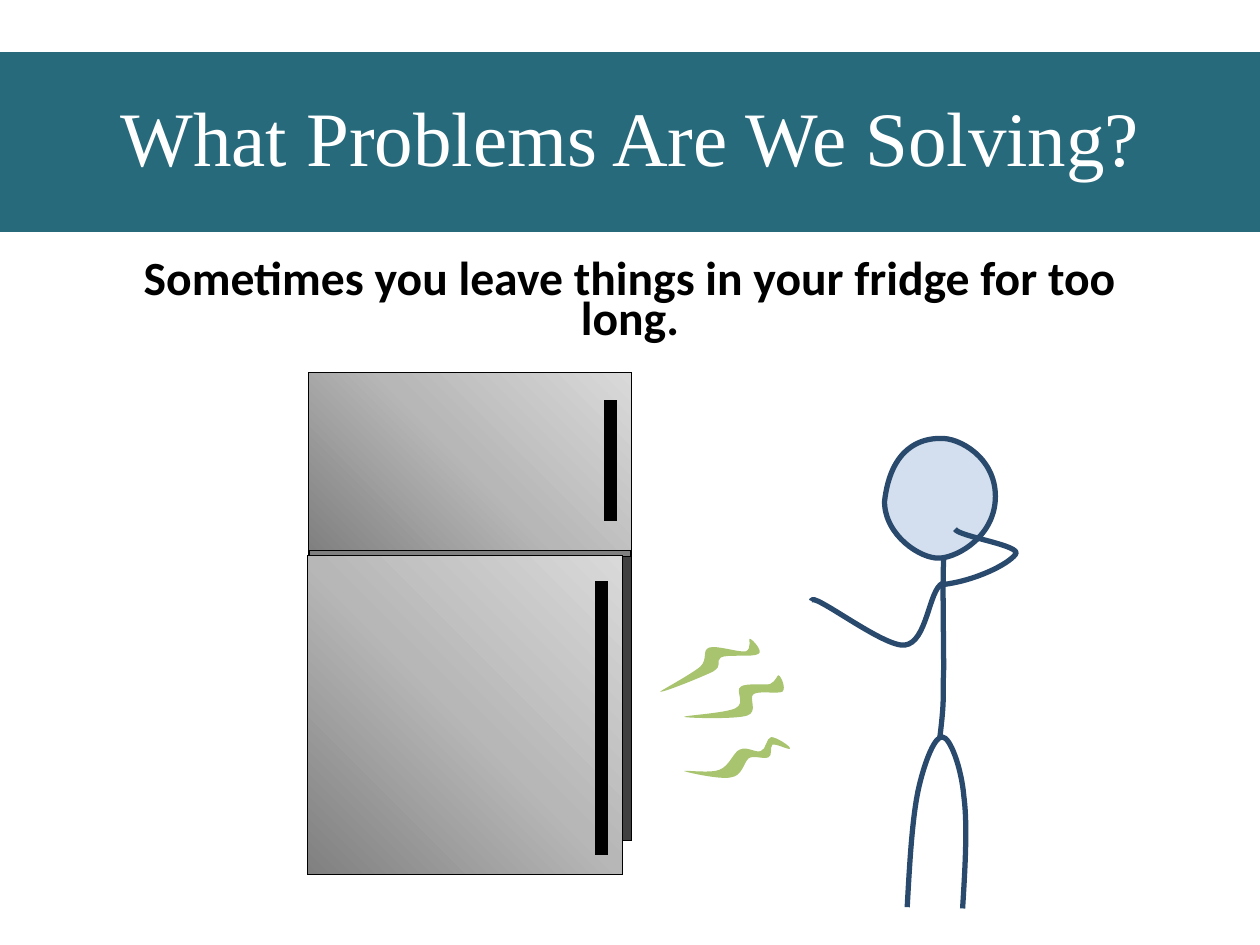
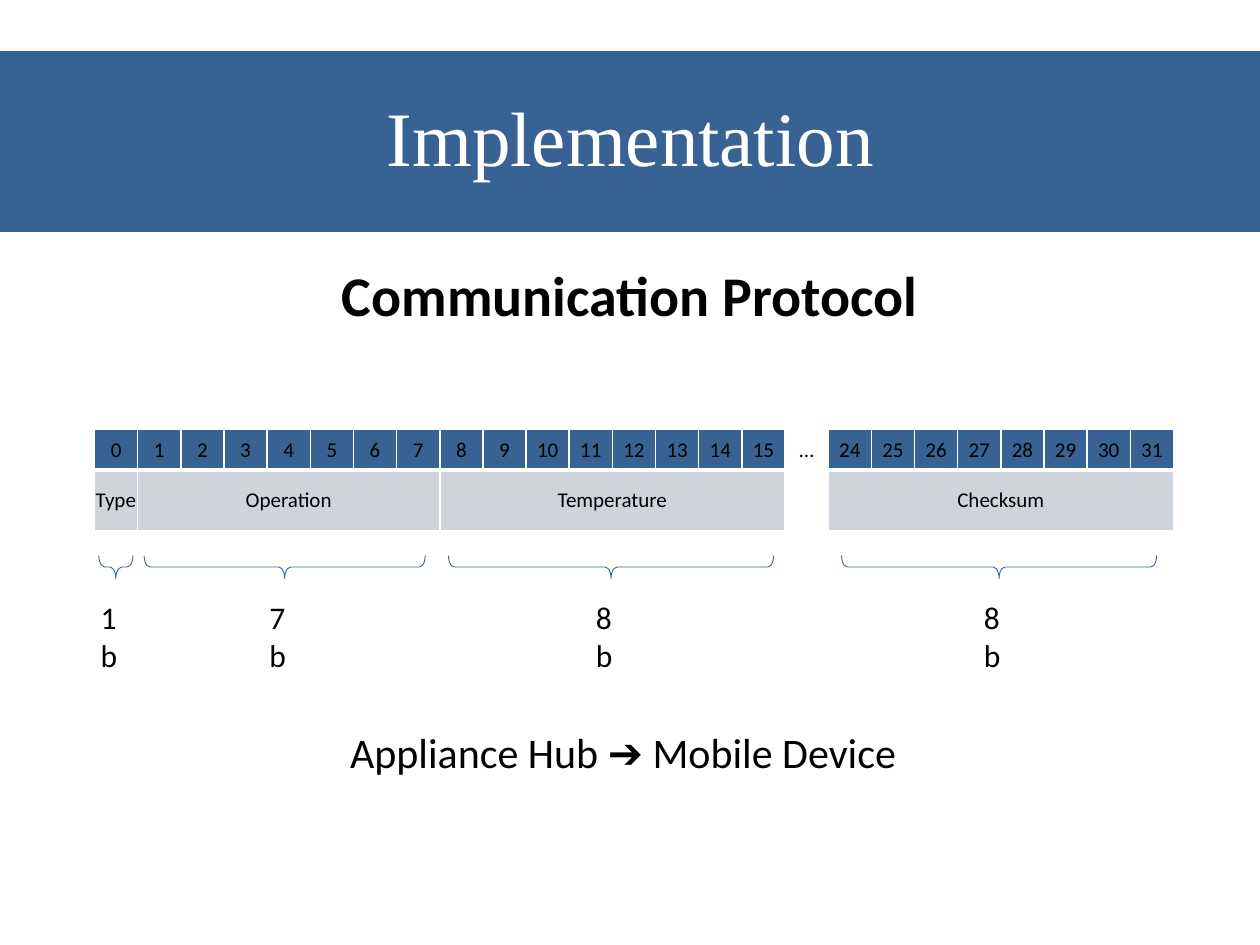
from copy import deepcopy

from lxml.etree import SubElement
from pptx import Presentation
from pptx.dml.color import RGBColor
from pptx.enum.shapes import MSO_SHAPE as Preset
from pptx.enum.text import MSO_ANCHOR as Anchor, PP_ALIGN as Align
from pptx.oxml.ns import qn
from pptx.util import Inches, Pt

COLORS = {
    "teal": "276A7C", "blue": "386294", "navy": "29496D", "skin": "D3DFEE",
    "smell": "A8C46F", "cell": "CED3DC", "white": "FFFFFF", "black": "000000",
    "gray": "808080", "charcoal": "404040",
}
STEEL = [(0, "808080"), (0.5, "B7B7B7"), (1, "D9D9D9")]
BODY_FONT, TITLE_FONT = "Calibri", "Times New Roman"

# Slide 1 content: fridge parts as (box, fill, line width)
FRIDGE = [
    ((2.45, 4.23, 2.56, 0.36), "gray", 1),
    ((2.45, 4.42, 2.56, 2.25), "charcoal", 0.5),
    ((2.45, 2.96, 2.56, 1.41), "steel", 0.5),
    ((4.8, 3.18, 0.09, 0.95), "black", 1),
    ((2.44, 4.41, 2.5, 2.53), "steel", 0.5),
    ((4.73, 4.62, 0.09, 2.16), "black", 1),
]

# Curves: a start point, then two control points and an end point per piece
HEAD = [(7.9, 3.94), (7.9, 3.63), (7.61, 3.47), (7.46, 3.48), (7.31, 3.48),
        (7.07, 3.55), (7.02, 3.98), (7.02, 4.25), (7.31, 4.44), (7.46, 4.43),
        (7.61, 4.42), (7.9, 4.25), (7.9, 3.94)]
LIMBS = [
    # spine
    [(7.49, 4.44), (7.48, 4.63), (7.49, 5.07), (7.49, 5.31),
     (7.48, 5.55), (7.5, 5.52), (7.46, 5.85)],
    # arm holding the nose
    [(7.48, 4.64), (7.74, 4.61), (8, 4.48), (8.06, 4.4),
     (8.12, 4.33), (7.61, 4.26), (7.58, 4.2)],
    # arm reaching out
    [(7.48, 4.63), (7.37, 4.68), (7.36, 5.1), (7.18, 5.12),
     (7.01, 5.14), (6.43, 4.68), (6.44, 4.77)],
    # legs
    [(7.2, 7.2), (7.22, 6.84), (7.24, 6.49), (7.29, 6.26),
     (7.34, 6.04), (7.42, 5.84), (7.48, 5.85), (7.54, 5.85), (7.63, 6.09),
     (7.65, 6.32), (7.68, 6.55), (7.66, 6.88), (7.64, 7.21)],
]
SMELLS = [
    [(5.43, 5.69), (5.42, 5.68), (5.77, 5.66), (5.84, 5.62),
     (5.92, 5.58), (5.83, 5.48), (5.88, 5.45), (5.92, 5.42), (6.06, 5.44),
     (6.11, 5.43), (6.16, 5.41), (6.17, 5.35), (6.18, 5.36), (6.2, 5.37),
     (6.24, 5.46), (6.21, 5.49), (6.17, 5.51), (6.02, 5.48), (5.98, 5.51),
     (5.94, 5.54), (6.02, 5.65), (5.93, 5.68), (5.84, 5.71), (5.45, 5.7),
     (5.43, 5.69)],
    [(5.24, 5.49), (5.23, 5.49), (5.49, 5.35), (5.56, 5.29),
     (5.62, 5.23), (5.57, 5.16), (5.63, 5.14), (5.69, 5.12), (5.86, 5.18),
     (5.92, 5.17), (5.97, 5.15), (5.94, 5.06), (5.95, 5.07), (5.97, 5.07),
     (6.06, 5.17), (6.02, 5.19), (5.98, 5.22), (5.76, 5.19), (5.72, 5.22),
     (5.68, 5.25), (5.74, 5.28), (5.66, 5.33), (5.58, 5.37), (5.26, 5.5),
     (5.24, 5.49)],
    [(5.43, 6.12), (5.42, 6.11), (5.64, 6.14), (5.71, 6.11),
     (5.79, 6.08), (5.82, 5.97), (5.87, 5.95), (5.93, 5.92), (6, 5.98),
     (6.04, 5.96), (6.08, 5.95), (6.08, 5.86), (6.12, 5.85), (6.16, 5.85),
     (6.27, 5.92), (6.27, 5.94), (6.27, 5.96), (6.16, 5.9), (6.13, 5.91),
     (6.11, 5.93), (6.13, 6), (6.1, 6.01), (6.06, 6.03), (5.98, 5.99),
     (5.94, 6.02), (5.9, 6.06), (5.89, 6.16), (5.8, 6.17), (5.72, 6.19),
     (5.45, 6.13), (5.43, 6.12)],
]

# Slide 2 content: fields as (name, first column, bits, brace centre, brace length)
BITS = [*range(16), "…", *range(24, 32)]
FIELDS = [
    ("Type", 0, 1, 0.92, 0.27),
    ("Operation", 1, 7, 2.26, 2.23),
    ("Temperature", 8, 8, 4.85, 2.58),
    ("Checksum", 17, 8, 7.93, 2.5),
]


def rgb(name):
    return RGBColor.from_string(COLORS[name])


def inches(values):
    return [Inches(value) for value in values]


def paint(shape, fill=None, line=None, width=1):
    """Set fill and outline; None leaves that part empty."""
    shape.shadow.inherit = False
    if fill == "steel":
        shape.fill.gradient()
        shape.fill.gradient_angle = 45
        stops = shape._element.spPr.find(".//" + qn("a:gsLst"))
        stops.insert(1, deepcopy(stops[0]))
        for stop, (position, color) in zip(shape.fill.gradient_stops, STEEL):
            stop.position = position
            stop.color.rgb = RGBColor.from_string(color)
    elif fill:
        shape.fill.solid()
        shape.fill.fore_color.rgb = rgb(fill)
    else:
        shape.fill.background()
    if line:
        shape.line.color.rgb = rgb(line)
        shape.line.width = Pt(width)
    else:
        shape.line.fill.background()


def write(frame, text, size, font=BODY_FONT, color="black", bold=False,
          align=Align.LEFT, spacing=None, before=None):
    frame.word_wrap = True
    paragraph = frame.paragraphs[0]
    paragraph.text = text
    paragraph.alignment = align
    if spacing:
        paragraph.line_spacing = spacing
    if before:
        paragraph.space_before = Pt(before)
    paragraph.font.size = Pt(size)
    paragraph.font.name = font
    paragraph.font.bold = bold
    paragraph.font.color.rgb = rgb(color)


def add_text(slide, box, text, size, anchor=Anchor.TOP, **style):
    frame = slide.shapes.add_textbox(*inches(box)).text_frame
    frame.vertical_anchor = anchor
    write(frame, text, size, **style)


def add_headed_slide(deck, title, band_color, band_line, subtitle, top, size, spacing):
    """Blank slide with the title band and the bold subtitle."""
    slide = deck.slides.add_slide(deck.slide_layouts[6])
    band = slide.shapes.add_shape(Preset.RECTANGLE, *inches((-0.07, 0.4, 10.15, 1.45)))
    paint(band, band_color, "white", band_line)
    band.text_frame.vertical_anchor = Anchor.MIDDLE
    write(band.text_frame, title, 44, TITLE_FONT, "white", align=Align.CENTER, spacing=0.9)
    add_text(slide, (0.69, top, 8.62, 0.8), subtitle, size, Anchor.MIDDLE,
             bold=True, align=Align.CENTER, spacing=spacing, before=10)
    return slide


def add_curve(shapes, points, closed=False, **look):
    """Freeform whose line segments are joined, three by three, into cubic curves."""
    builder = shapes.build_freeform(*inches(points[0]))
    builder.add_line_segments([inches(point) for point in points[1:]], close=closed)
    curve = builder.convert_to_shape()
    outline = curve._element.spPr.find(".//" + qn("a:path"))
    segments = outline.findall(qn("a:lnTo"))
    for first, second, third in zip(segments[::3], segments[1::3], segments[2::3]):
        first.tag = qn("a:cubicBezTo")
        for segment in (second, third):
            first.append(segment[0])
            outline.remove(segment)
    paint(curve, **look)


def style_cell(cell, fill, borders):
    cell.vertical_anchor = Anchor.MIDDLE
    cell.margin_left = cell.margin_right = cell.margin_top = Inches(0.01)
    cell.margin_bottom = 0
    properties = cell._tc.get_or_add_tcPr()
    for side, width in zip("LRTB", borders):
        border = SubElement(properties, qn(f"a:ln{side}"), w=str(Pt(width)))
        color = SubElement(SubElement(border, qn("a:solidFill")), qn("a:srgbClr"))
        color.set("val", COLORS["white"])
    if fill:
        cell.fill.solid()
        cell.fill.fore_color.rgb = rgb(fill)
    else:
        cell.fill.background()


def build_problem_slide(deck):
    slide = add_headed_slide(
        deck, "What Problems Are We Solving?", "teal", 1.5,
        "Sometimes you leave things in your fridge for too long.", 2.01, 27.2, 0.7)
    scene = slide.shapes.add_group_shape().shapes
    for box, fill, width in FRIDGE:
        panel = scene.add_shape(Preset.RECTANGLE, *inches(box))
        paint(panel, fill, "black", width)
        SubElement(panel._element.spPr.find(qn("a:ln")), qn("a:miter"), lim="800000")
    add_curve(scene, HEAD, closed=True, fill="skin", line="navy", width=3)
    for limb in LIMBS:
        add_curve(scene, limb, line="navy", width=3)
    for smell in SMELLS:
        add_curve(scene, smell, closed=True, fill="smell")


def build_protocol_slide(deck):
    slide = add_headed_slide(deck, "Implementation", "blue", 1,
                             "Communication Protocol", 1.97, 32, 0.9)
    add_text(slide, (2.68, 5.72, 4.65, 0.5), "Appliance Hub ➔ Mobile Device", 24)

    # Packet table: bit numbers above, fields below
    packet = slide.shapes.add_table(2, len(BITS), *inches((0.75, 3.41, 8.57, 0.8))).table
    packet.first_row = packet.horz_banding = False
    for row, height in zip(packet.rows, (0.32, 0.48)):
        row.height = Inches(height)
    for column, bit in enumerate(BITS):
        packet.columns[column].width = Inches(8.57 / len(BITS))
        gap = bit == "…"
        number, field = packet.cell(0, column), packet.cell(1, column)
        style_cell(number, None if gap else "blue", (1, 1, 1, 3))
        style_cell(field, None if gap else "cell", (1, 1, 3, 1))
        write(number.text_frame, str(bit), 12, align=Align.CENTER)

    # Field names, braces and bit counts
    for name, first, bits, centre, length in FIELDS:
        field = packet.cell(1, first)
        if bits > 1:
            field.merge(packet.cell(1, first + bits - 1))
        write(field.text_frame, name, 12,
              align=Align.CENTER if bits > 1 else Align.LEFT)
        brace = slide.shapes.add_shape(
            Preset.LEFT_BRACE, *inches((centre - 0.09, 4.5 - length / 2, 0.18, length)))
        brace.rotation = 270
        brace.adjustments[0] = 0.26
        paint(brace, line="blue", width=0.5)
        add_text(slide, (centre - 0.22, 4.7, 0.45, 0.4), f"{bits}b", 18)


def main():
    deck = Presentation()
    deck.slide_width, deck.slide_height = Inches(10), Inches(7.5)
    build_problem_slide(deck)
    build_protocol_slide(deck)
    deck.save("out.pptx")


if __name__ == "__main__":
    main()
